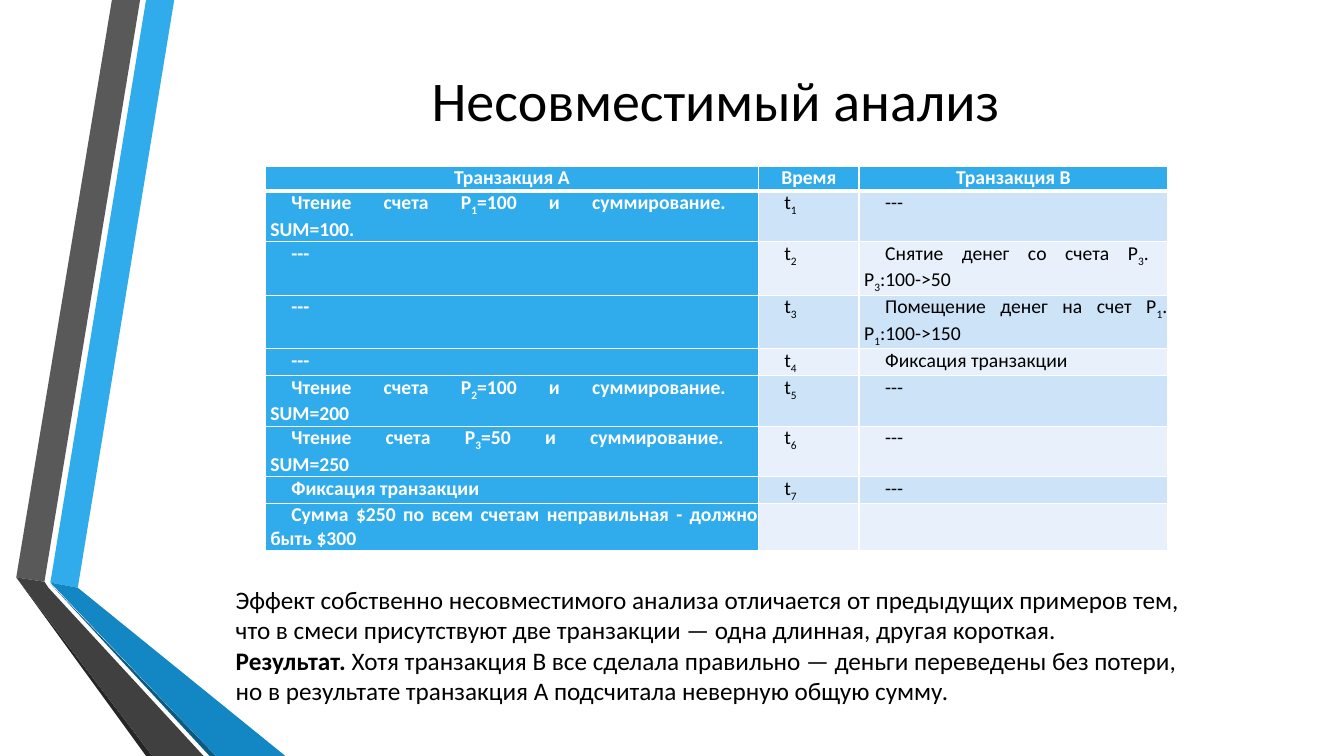
from lxml import etree
from pptx import Presentation
from pptx.dml.color import RGBColor
from pptx.enum.text import MSO_ANCHOR, PP_ALIGN
from pptx.oxml.ns import qn
from pptx.util import Cm, Pt

CENTER = PP_ALIGN.CENTER
JUSTIFY = PP_ALIGN.JUSTIFY
MIDDLE = MSO_ANCHOR.MIDDLE
FONT = "Calibri"
BLUE = "30ACEC"
WHITE = "FFFFFF"
BLACK = "000000"
BANDS = ["E8F1FB", "CDE3F8"]


def color(value):
    return RGBColor.from_string(value)


def style(span, size, value, bold=False):
    span.font.name = FONT
    span.font.size = Pt(size)
    span.font.color.rgb = color(value)
    span.font.bold = bold


deck = Presentation()
deck.slide_width = Cm(33.86)
deck.slide_height = Cm(19.05)
page = deck.slides.add_slide(deck.slide_layouts[6])

ribbons = [
    (BLUE, [(1.27, 14.68), (1.96, 14.81), (4.39, 0), (3.68, 0)]),
    ("595959", [(3.53, 0), (2.82, 0), (0.41, 14.55), (1.12, 14.66)]),
    ("262626", [(0.41, 14.55), (3.68, 19.05), (3.84, 19.05)]),
    ("0C5A82", [(1.27, 14.71), (5.28, 19.05), (5.44, 19.05)]),
    ("1287C3", [(1.27, 14.68), (5.44, 19.05), (7.19, 19.05), (1.96, 14.81)]),
    ("404040", [(5.13, 19.05), (1.22, 14.81), (1.12, 14.66), (0.41, 14.55), (3.84, 19.05)]),
]
for fill, corners in ribbons:
    points = [(Cm(x), Cm(y)) for x, y in corners]
    builder = page.shapes.build_freeform(*points[0])
    builder.add_line_segments(points[1:])
    ribbon = builder.convert_to_shape()
    ribbon.shadow.inherit = False
    ribbon.fill.solid()
    ribbon.fill.fore_color.rgb = color(fill)
    ribbon.line.fill.background()

title = page.shapes.add_textbox(Cm(4.11), Cm(0.89), Cm(27.84), Cm(3.23))
title.text_frame.word_wrap = True
title.text_frame.vertical_anchor = MIDDLE
title.text_frame.text = "Несовместимый анализ"
title.text_frame.paragraphs[0].alignment = CENTER
style(title.text_frame.paragraphs[0].runs[0], 40, BLACK)

rows = [
    ("Транзакция A ", "Время ", "Транзакция B "),
    ("Чтение счета P_1_=100 и суммирование. \nSUM=100.", "t_1_", "--- "),
    ("--- ", "t_2_", "Снятие денег со счета P_3_. \nP_3_:100->50"),
    ("--- ", "t_3_", "Помещение денег на счет P_1_. P_1_:100->150"),
    ("--- ", "t_4_", "Фиксация транзакции "),
    ("Чтение счета P_2_=100 и суммирование. \nSUM=200", "t_5_", "--- "),
    ("Чтение счета P_3_=50 и суммирование. \nSUM=250", "t_6_", "--- "),
    ("Фиксация транзакции ", "t_7_", "--- "),
    ("Сумма $250 по всем счетам неправильная - должно быть $300 ", "", ""),
]
widths = [12.42, 2.54, 7.77]
heights = [0.63, 1.27, 1.33, 1.27, 0.68, 1.27, 1.27, 0.67, 1.2]
frame = page.shapes.add_table(
    len(rows), len(widths), Cm(6.68), Cm(4.19), Cm(sum(widths)), Cm(sum(heights))
)
table = frame.table
for column, width in zip(table.columns, widths):
    column.width = Cm(width)

for r, texts in enumerate(rows):
    table.rows[r].height = Cm(heights[r])
    for c, text in enumerate(texts):
        cell = table.cell(r, c)
        cell.margin_left = cell.margin_right = cell.margin_top = cell.margin_bottom = 0
        thick = {0: "lnB", 1: "lnT"}.get(r)
        properties = cell._tc.get_or_add_tcPr()
        for side in ("lnL", "lnR", "lnT", "lnB"):
            points = 3 if side == thick else 1
            border = etree.SubElement(properties, qn("a:" + side), w=str(Pt(points)))
            paint = etree.SubElement(border, qn("a:solidFill"))
            etree.SubElement(paint, qn("a:srgbClr"), val=WHITE)
        strong = r == 0 or c == 0
        cell.fill.solid()
        cell.fill.fore_color.rgb = color(BLUE if strong else BANDS[r % 2])
        if not text:
            continue
        para = cell.text_frame.paragraphs[0]
        para.alignment = CENTER if r == 0 else JUSTIFY
        para.space_before = Pt(3)
        para.space_after = Pt(8.2)
        indent = para._p.get_or_add_pPr()
        indent.set("marL", str(Cm(0.13)))
        indent.set("indent", str(Cm(0 if r == 0 else 0.53)))
        for number, line in enumerate(text.split("\n")):
            if number:
                para.add_line_break()
            for position, piece in enumerate(line.split("_")):
                if not piece:
                    continue
                span = para.add_run()
                span.text = piece
                style(span, 14, WHITE if strong else BLACK, strong)
                if position % 2:
                    span.font._element.set("baseline", "-25000")

summary = page.shapes.add_textbox(Cm(5.69), Cm(14.6), Cm(24.71), Cm(4.11))
summary.text_frame.word_wrap = True
paragraphs = [
    [("Эффект собственно несовместимого анализа отличается от предыдущих примеров тем, "
      "что в смеси присутствуют две транзакции — одна длинная, другая короткая. ", False)],
    [("Результат. ", True),
     ("Хотя транзакция B все сделала правильно — деньги переведены без потери, "
      "но в результате транзакция A подсчитала неверную общую сумму. ", False)],
]
for number, spans in enumerate(paragraphs):
    body = summary.text_frame
    para = body.add_paragraph() if number else body.paragraphs[0]
    for text, bold in spans:
        span = para.add_run()
        span.text = text
        style(span, 18, BLACK, bold)

deck.save("out.pptx")
